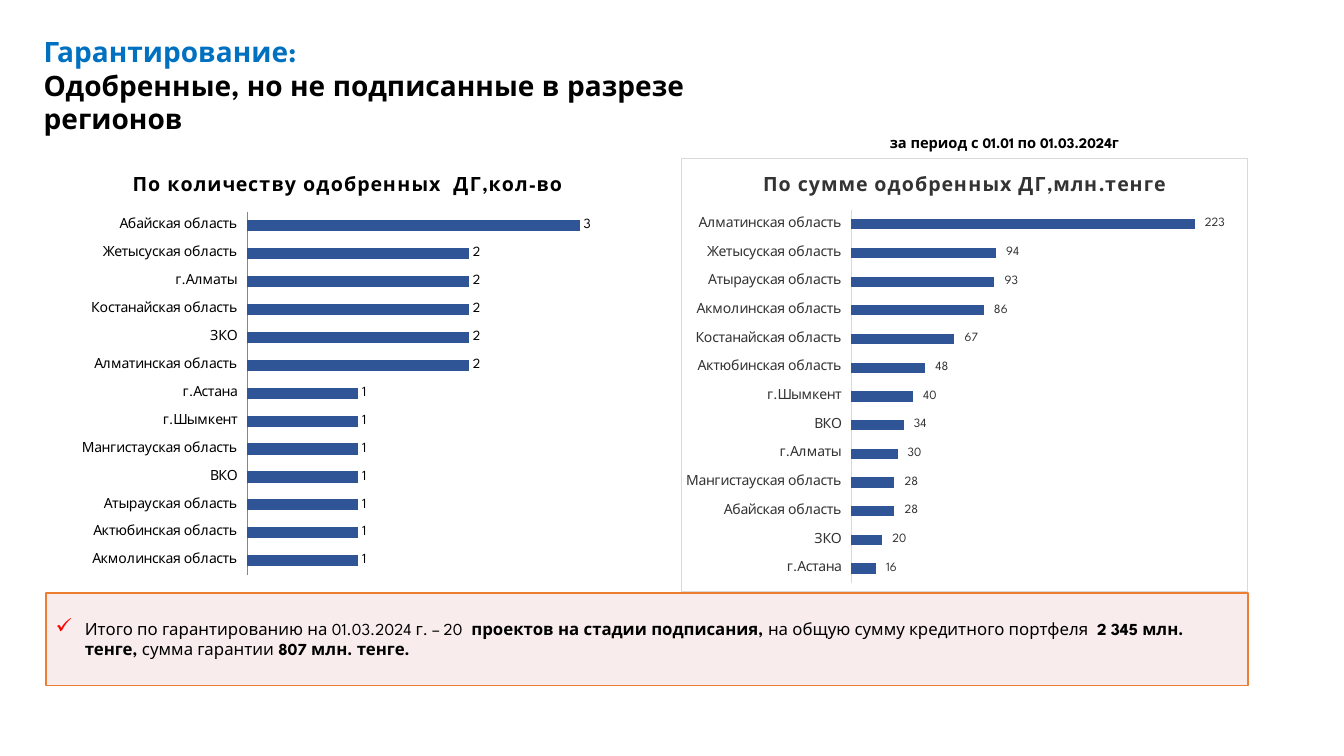
"""Build the slide on approved but unsigned guarantees by region."""
from lxml.etree import SubElement
from pptx import Presentation
from pptx.chart.data import CategoryChartData
from pptx.dml.color import RGBColor
from pptx.enum.chart import XL_CHART_TYPE, XL_LABEL_POSITION, XL_TICK_LABEL_POSITION, XL_TICK_MARK
from pptx.enum.shapes import MSO_SHAPE
from pptx.enum.text import MSO_ANCHOR, MSO_AUTO_SIZE, PP_ALIGN
from pptx.oxml import parse_xml
from pptx.oxml.ns import nsdecls, qn
from pptx.util import Pt

COLORS = {
    "blue": "0070C0", "black": "000000", "bar": "2F5597", "grey": "333333",
    "border": "D9D9D9", "axis": "868686", "pink": "F2DCDB", "orange": "ED7D31",
    "red": "FF0000", "white": "FFFFFF",
}
FONT = "League Spartan"
AMOUNT_FORMAT = r'_-* #\ ##0_р_._-;\-* #\ ##0_р_._-;_-* "-"'


def style_font(font, size, color, bold=False):
    font.name = FONT
    font.size = Pt(size)
    font.bold = bold
    font.color.rgb = RGBColor.from_string(COLORS[color])


deck = Presentation()
deck.slide_width, deck.slide_height = Pt(960), Pt(540)
page = deck.slides.add_slide(deck.slide_layouts[5])

title = page.shapes.title
title.left, title.top, title.width, title.height = Pt(24), Pt(21), Pt(566.5), Pt(80)
title.text_frame.text = "Гарантирование:\nОдобренные, но не подписанные в разрезе регионов"
title.text_frame.vertical_anchor = MSO_ANCHOR.TOP
title.text_frame.auto_size = MSO_AUTO_SIZE.NONE
for para, color in zip(title.text_frame.paragraphs, ("blue", "black")):
    para.alignment = PP_ALIGN.LEFT
    style_font(para.runs[0].font, 20, color, True)

period = page.shapes.add_textbox(Pt(628.5), Pt(92), Pt(186), Pt(20))
period.text_frame.word_wrap = True
period.text_frame.text = "за период с 01.01 по 01.03.2024г"
style_font(period.text_frame.paragraphs[0].runs[0].font, 10.5, "black", True)

summary = page.shapes.add_shape(MSO_SHAPE.RECTANGLE, Pt(33), Pt(423.5), Pt(858.5), Pt(66))
summary.shadow.inherit = False
summary.fill.solid()
summary.fill.fore_color.rgb = RGBColor.from_string(COLORS["pink"])
fill_color = summary.fill._xPr.find(qn("a:solidFill"))[0]
SubElement(fill_color, qn("a:alpha")).set("val", "50000")
summary.line.color.rgb = RGBColor.from_string(COLORS["orange"])
summary.line.width = Pt(1)
frame = summary.text_frame
frame.word_wrap = True
frame.vertical_anchor = MSO_ANCHOR.MIDDLE
frame.margin_left = frame.margin_right = Pt(6)
frame.margin_top = frame.margin_bottom = Pt(3)
para = frame.paragraphs[0]
para.alignment = PP_ALIGN.LEFT
para.space_after = Pt(6)
properties = para._p.get_or_add_pPr()
properties.set("marL", str(Pt(21.6)))
properties.set("indent", str(Pt(-20.9)))
bullet_color = SubElement(properties, qn("a:buClr"))
SubElement(bullet_color, qn("a:srgbClr")).set("val", COLORS["red"])
SubElement(properties, qn("a:buSzPct")).set("val", "125000")
SubElement(properties, qn("a:buChar")).set("char", "✓")
summary_parts = [
    ("Итого по гарантированию на 01.03.2024 г. – 20 ", False),
    (" проектов на стадии подписания, ", True),
    ("на общую сумму кредитного портфеля  ", False),
    ("2 345 млн. тенге, ", True),
    ("сумма гарантии ", False),
    ("807 млн. тенге.", True),
]
for text, bold in summary_parts:
    span = para.add_run()
    span.text = text
    style_font(span.font, 12, "black", bold)

charts = [
    {
        "title": "По сумме одобренных ДГ,млн.тенге", "left": 486.5, "width": 405,
        "plot": (0.3, 0.12, 0.68, 0.86), "maximum": 250, "gap": 182, "label_size": 9,
        "color": "grey", "axis": "border", "border": True, "format": AMOUNT_FORMAT,
        "values": [
            ("г.Астана", 16), ("ЗКО", 20), ("Абайская область", 28),
            ("Мангистауская область", 28), ("г.Алматы", 30), ("ВКО", 34),
            ("г.Шымкент", 40), ("Актюбинская область", 48),
            ("Костанайская область", 67), ("Акмолинская область", 86),
            ("Атырауская область", 93), ("Жетысуская область", 94),
            ("Алматинская область", 223),
        ],
    },
    {
        "title": "По количеству одобренных  ДГ,кол-во", "left": 24, "width": 449,
        "plot": (0.34, 0.125, 0.617, 0.835), "maximum": 3.5, "gap": 150, "label_size": 10,
        "color": "black", "axis": "axis", "border": False, "format": "General",
        "values": [
            ("Акмолинская область", 1), ("Актюбинская область", 1),
            ("Атырауская область", 1), ("ВКО", 1), ("Мангистауская область", 1),
            ("г.Шымкент", 1), ("г.Астана", 1), ("Алматинская область", 2),
            ("ЗКО", 2), ("Костанайская область", 2), ("г.Алматы", 2),
            ("Жетысуская область", 2), ("Абайская область", 3),
        ],
    },
]
for item in charts:
    data = CategoryChartData(number_format=item["format"])
    data.categories = [region for region, value in item["values"]]
    data.add_series("Series 1", [value for region, value in item["values"]])
    chart = page.shapes.add_chart(
        XL_CHART_TYPE.BAR_CLUSTERED, Pt(item["left"]), Pt(112.5),
        Pt(item["width"]), Pt(310.5), data).chart
    chart.font.name = "Calibri"
    chart.font.size = Pt(10)
    chart.font.color.rgb = RGBColor.from_string(COLORS["black"])
    chart.has_legend = False

    chart.has_title = True
    chart.chart_title.include_in_layout = False
    chart.chart_title.text_frame.text = item["title"]
    span = chart.chart_title.text_frame.paragraphs[0].runs[0]
    style_font(span.font, 14, item["color"], True)
    span._r.get_or_add_rPr().set("spc", "50")

    regions = chart.category_axis
    regions.major_tick_mark = regions.minor_tick_mark = XL_TICK_MARK.NONE
    regions.tick_label_position = XL_TICK_LABEL_POSITION.LOW
    style_font(regions.tick_labels.font, 10, item["color"])
    regions.format.line.color.rgb = RGBColor.from_string(COLORS[item["axis"]])
    regions.format.line.width = Pt(0.75)
    scale = chart.value_axis
    scale.visible = scale.has_major_gridlines = False
    scale.minimum_scale, scale.maximum_scale = 0, item["maximum"]

    plot = chart.plots[0]
    plot.gap_width = item["gap"]
    plot.vary_by_categories = False
    bars = plot.series[0].format.fill
    bars.solid()
    bars.fore_color.rgb = RGBColor.from_string(COLORS["bar"])
    plot.has_data_labels = True
    labels = plot.data_labels
    labels.show_value = True
    labels.position = XL_LABEL_POSITION.OUTSIDE_END
    labels.number_format = item["format"]
    labels.number_format_is_linked = False
    style_font(labels.font, item["label_size"], item["color"])

    plot_area = chart._chartSpace.chart.plotArea
    for old_layout in plot_area.findall(qn("c:layout")):
        plot_area.remove(old_layout)
    x, y, width, height = item["plot"]
    plot_area.insert(0, parse_xml(
        f'<c:layout {nsdecls("c")}><c:manualLayout><c:layoutTarget val="inner"/>'
        f'<c:xMode val="edge"/><c:yMode val="edge"/><c:x val="{x}"/><c:y val="{y}"/>'
        f'<c:w val="{width}"/><c:h val="{height}"/></c:manualLayout></c:layout>'))

    def_fill = f'<a:solidFill><a:srgbClr val="{COLORS["white"]}"/></a:solidFill>'
    def_line = f'<a:solidFill><a:srgbClr val="{COLORS["border"]}"/></a:solidFill>'
    area_fill, area_line = (def_fill, def_line) if item["border"] else ("<a:noFill/>",) * 2
    chart._chartSpace.chart.addnext(parse_xml(
        f'<c:spPr {nsdecls("c", "a")}>{area_fill}'
        f'<a:ln w="{Pt(0.75)}">{area_line}</a:ln></c:spPr>'))

deck.save("out.pptx")
